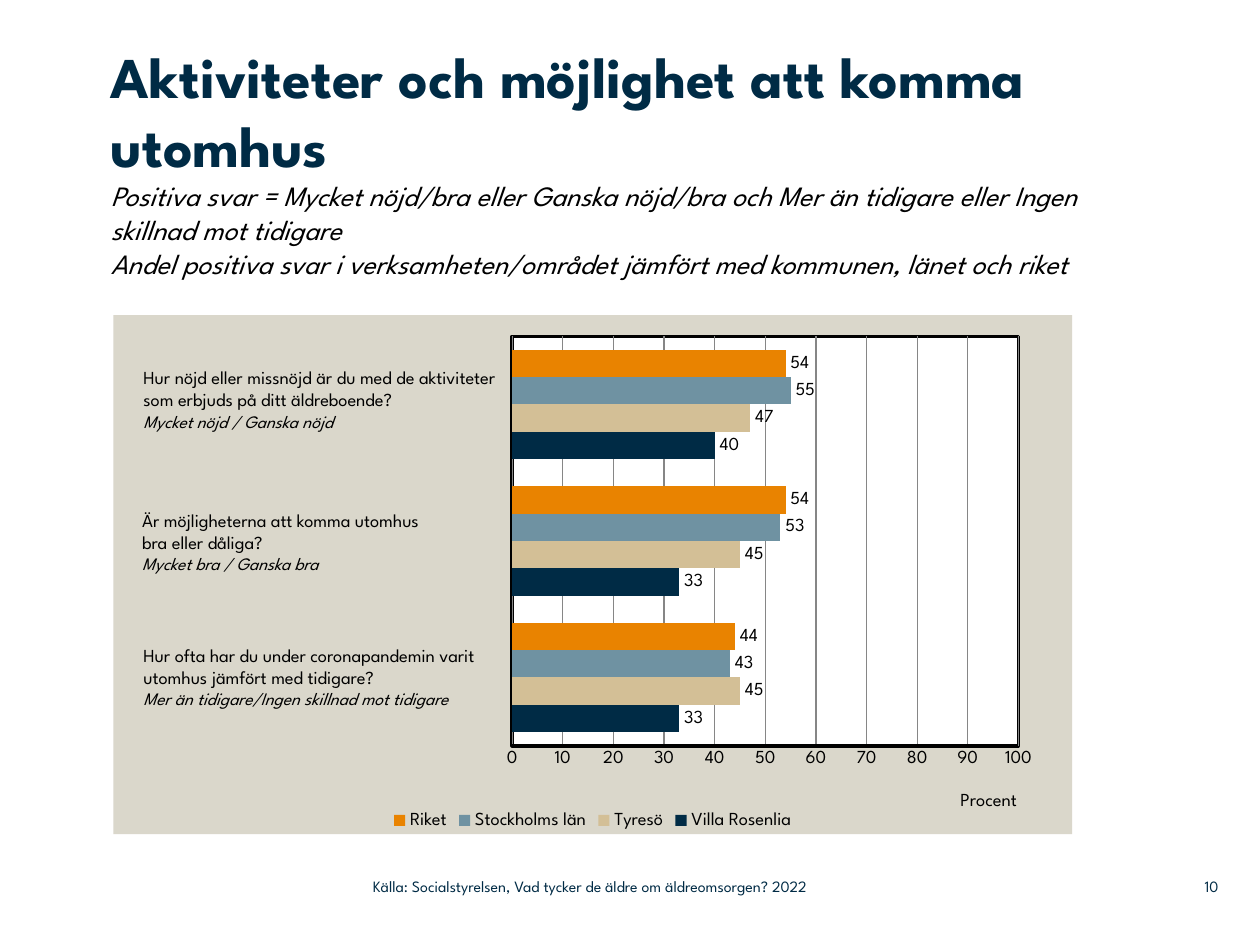
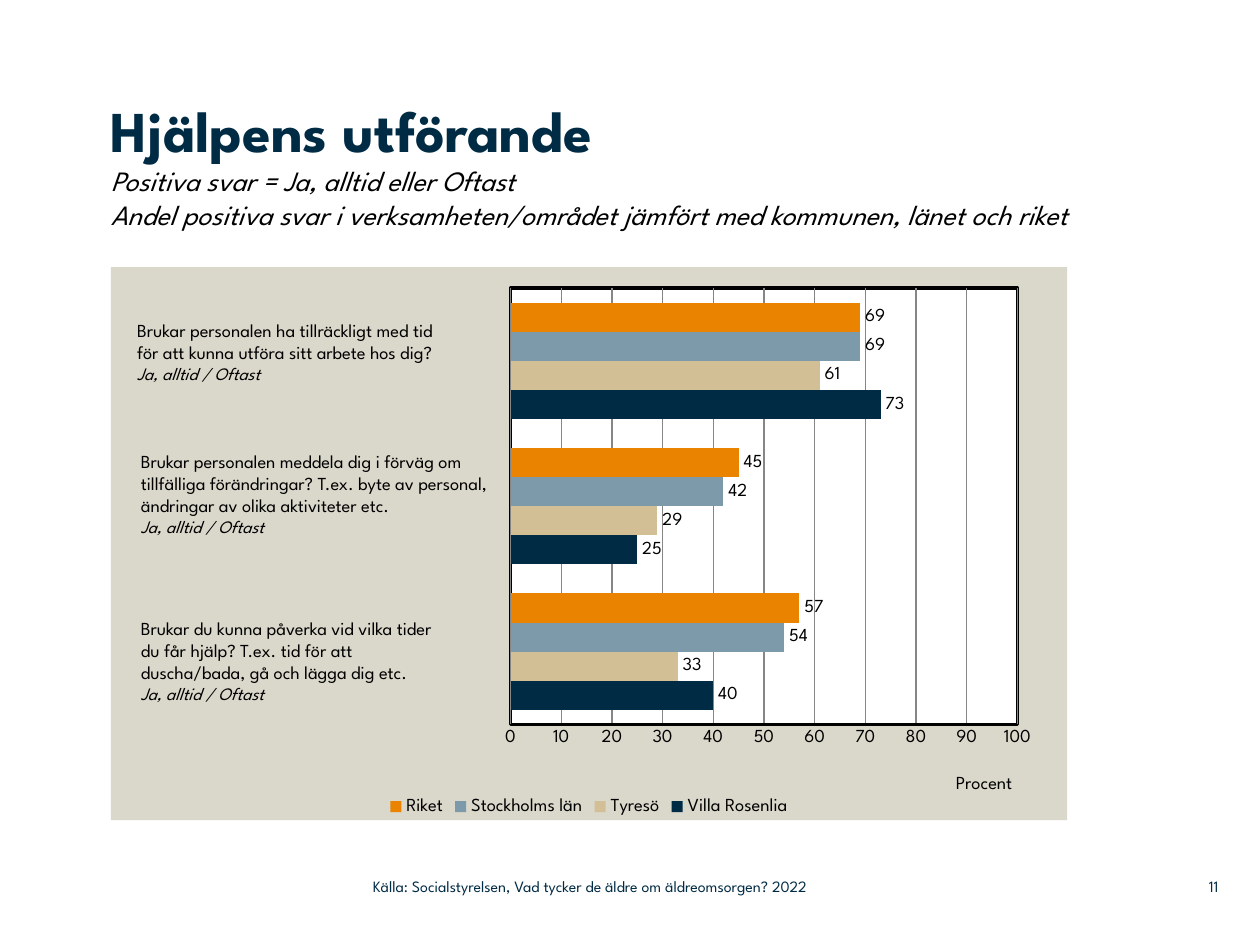
"""Build two slides of survey results on elderly care, each with a bar chart."""
from lxml.etree import SubElement
from pptx import Presentation
from pptx.chart.data import CategoryChartData
from pptx.dml.color import RGBColor
from pptx.enum.chart import XL_CHART_TYPE as ChartType, XL_LABEL_POSITION as LabelPosition
from pptx.enum.chart import XL_LEGEND_POSITION as LegendPosition, XL_TICK_MARK as TickMark
from pptx.enum.text import MSO_ANCHOR as Anchor, MSO_AUTO_SIZE as AutoSize, PP_ALIGN as Align
from pptx.oxml import parse_xml
from pptx.oxml.ns import nsdecls, qn
from pptx.util import Pt

PX = 9144
NAVY = RGBColor(0x00, 0x2B, 0x45)
SAND = RGBColor(0xD3, 0xBF, 0x96)
STEEL = RGBColor(0x6F, 0x92, 0xA2)
MIST = RGBColor(0x7D, 0x9A, 0xAA)
ORANGE = RGBColor(0xE9, 0x83, 0x00)
STONE = RGBColor(0xDA, 0xD7, 0xCB)
WHITE = RGBColor(0xFF, 0xFF, 0xFF)
GREY = RGBColor(0x86, 0x86, 0x86)
BLACK = RGBColor(0x00, 0x00, 0x00)

COMPARISON = "Andel positiva svar i verksamheten/området jämfört med kommunen, länet och riket"
SOURCE = "Källa: Socialstyrelsen, Vad tycker de äldre om äldreomsorgen? 2022"


def fill_properties(color, line=""):
    """Return shape properties with a solid fill and an optional black outline."""
    outline = (f'<a:ln w="{Pt(2)}"><a:solidFill><a:srgbClr val="{BLACK}"/></a:solidFill></a:ln>'
               if line else "<a:ln><a:noFill/></a:ln>")
    return parse_xml(f'<c:spPr {nsdecls("c", "a")}><a:solidFill><a:srgbClr val="{color}"/>'
                     f'</a:solidFill>{outline}</c:spPr>')


def set_layout(parent, index, inner=False, **fractions):
    """Place a chart part by fractions of the chart's size."""
    for layout in parent.findall(qn("c:layout")):
        parent.remove(layout)
    layout = parse_xml(f'<c:layout {nsdecls("c")}/>')
    parent.insert(index, layout)
    manual = SubElement(layout, qn("c:manualLayout"))
    if inner:
        SubElement(manual, qn("c:layoutTarget")).set("val", "inner")
    for name in "xy":
        SubElement(manual, qn(f"c:{name}Mode")).set("val", "edge")
    for name, value in fractions.items():
        SubElement(manual, qn(f"c:{name}")).set("val", str(value))


class SurveyDeck:
    """Hold the shared style and the current slide."""

    font = "League Spartan"

    def __init__(self):
        self.presentation = Presentation()
        self.presentation.slide_width = 1000 * PX
        self.presentation.slide_height = 750 * PX
        self.slide = None

    def add_slide(self, number):
        """Start a slide with its source line and number."""
        self.slide = self.presentation.slides.add_slide(self.presentation.slide_layouts[5])
        self.add_footer(296, 443, SOURCE)
        self.add_footer(920, 47, str(number), Align.RIGHT)

    def style(self, font, size, color=BLACK, bold=False, italic=False):
        """Apply the deck's typeface to a font."""
        font.name, font.size = self.font, Pt(size)
        font.bold, font.italic = bold, italic
        font.color.rgb = color

    def add_lines(self, frame, lines, align=Align.LEFT):
        """Write one run per paragraph from (text, style) pairs."""
        for index, (text, style) in enumerate(lines):
            paragraph = frame.paragraphs[0] if index == 0 else frame.add_paragraph()
            paragraph.alignment = align
            run = paragraph.add_run()
            run.text = text
            self.style(run.font, **style)

    def clear_margins(self, frame):
        """Remove a text frame's insets and wrap its text."""
        frame.margin_left = frame.margin_right = frame.margin_top = frame.margin_bottom = 0
        frame.word_wrap = True

    def add_title(self, top, height, heading, definition):
        """Fill the title placeholder with a heading and two italic lines."""
        title = self.slide.shapes.title
        title.left, title.top, title.width, title.height = 88 * PX, top * PX, 780 * PX, height * PX
        frame = title.text_frame
        self.clear_margins(frame)
        frame.auto_size = AutoSize.NONE
        frame.vertical_anchor = Anchor.TOP
        note = dict(size=16, italic=True)
        self.add_lines(frame, [(heading, dict(size=33, color=NAVY, bold=True)),
                               (definition, note), (COMPARISON, note)])

    def add_footer(self, left, width, text, align=Align.LEFT):
        """Add a small text in the footer row."""
        box = self.slide.shapes.add_textbox(left * PX, 689 * PX, width * PX, 29 * PX)
        self.clear_margins(box.text_frame)
        box.text_frame.vertical_anchor = Anchor.MIDDLE
        self.add_lines(box.text_frame, [(text, dict(size=9, color=NAVY))], align)

    def add_question(self, left, top, height, *lines):
        """Add a question whose last line names the positive answers."""
        box = self.slide.shapes.add_textbox(left * PX, top * PX, 302 * PX, height * PX)
        box.text_frame.word_wrap = True
        box.text_frame.auto_size = AutoSize.SHAPE_TO_FIT_TEXT
        *question, answer = lines
        self.add_lines(box.text_frame, [(text, dict(size=10.5)) for text in question]
                       + [(answer, dict(size=10, italic=True))])

    def add_bar_chart(self, bounds, plot_bounds, series_values):
        """Add the grouped bars from (name, color, values) rows."""
        data = CategoryChartData(number_format="0")
        data.categories = ["1", "2", "3"]
        for name, _, values in series_values:
            data.add_series(name, values)
        chart = self.slide.shapes.add_chart(
            ChartType.BAR_CLUSTERED, *(length * PX for length in bounds), data).chart
        self.style(chart.font, 10.5)
        chart.has_title = False
        chart.has_legend = True
        chart.legend.position = LegendPosition.BOTTOM
        chart.legend.include_in_layout = False
        self.style(chart.legend.font, 10.5)
        self.format_bars(chart.plots[0], [color for _, color, _ in series_values])
        chart.category_axis.visible = False
        self.format_value_axis(chart.value_axis)
        plot_area = chart.element.find(".//" + qn("c:plotArea"))
        set_layout(plot_area, 0, inner=True, **dict(zip("xywh", plot_bounds)))
        plot_area.append(fill_properties(WHITE, line=True))
        chart.element.find(qn("c:txPr")).addprevious(fill_properties(STONE))

    def format_bars(self, plot, colors):
        """Set the bars' gap, colours and value labels."""
        plot.gap_width, plot.overlap = 100, 0
        plot.vary_by_categories = False
        for series, color in zip(plot.series, colors):
            series.format.fill.solid()
            series.format.fill.fore_color.rgb = color
            labels = series.data_labels
            labels.show_value = True
            labels.position = LabelPosition.OUTSIDE_END
            self.style(labels.font, 10.5)

    def format_value_axis(self, axis):
        """Set the percent scale, its grid and its title."""
        axis.minimum_scale, axis.maximum_scale, axis.major_unit = 0, 100, 10
        axis.major_tick_mark = axis.minor_tick_mark = TickMark.NONE
        axis.format.line.color.rgb = BLACK
        axis.format.line.width = Pt(2)
        axis.has_major_gridlines = True
        axis.major_gridlines.format.line.color.rgb = GREY
        axis.major_gridlines.format.line.width = Pt(0.75)
        self.style(axis.tick_labels.font, 10.5)
        self.add_lines(axis.axis_title.text_frame, [("Procent", dict(size=10.5))])
        set_layout(axis.axis_title.element, 1, x=0.88, y=0.91)


def main():
    """Build and save the deck."""
    deck = SurveyDeck()

    deck.add_slide(10)
    deck.add_title(32, 189, "Aktiviteter och möjlighet att komma utomhus",
                   "Positiva svar = Mycket nöjd/bra eller Ganska nöjd/bra och Mer än tidigare "
                   "eller Ingen skillnad mot tidigare")
    deck.add_bar_chart((90, 250, 761, 412), (0.416, 0.041, 0.528, 0.789), [
        ("Villa Rosenlia", NAVY, (33, 33, 40)),
        ("Tyresö", SAND, (45, 45, 47)),
        ("Stockholms län", STEEL, (43, 53, 55)),
        ("Riket", ORANGE, (44, 54, 54))])
    deck.add_question(104, 286, 98, "Hur nöjd eller missnöjd är du med de aktiviteter "
                      "som erbjuds på ditt äldreboende?", "Mycket nöjd / Ganska nöjd")
    deck.add_question(103, 399, 81, "Är möjligheterna att komma utomhus", "bra eller dåliga?",
                      "Mycket bra / Ganska bra")
    deck.add_question(104, 506, 79, "Hur ofta har du under coronapandemin varit utomhus "
                      "jämfört med tidigare?", "Mer än tidigare/Ingen skillnad mot tidigare")

    deck.add_slide(11)
    deck.add_title(75, 121, "Hjälpens utförande", "Positiva svar = Ja, alltid eller Oftast")
    deck.add_bar_chart((88, 212, 759, 439), (0.418, 0.038, 0.53, 0.789), [
        ("Villa Rosenlia", NAVY, (40, 25, 73)),
        ("Tyresö", SAND, (33, 29, 61)),
        ("Stockholms län", MIST, (54, 42, 69)),
        ("Riket", ORANGE, (57, 45, 69))])
    answer = "Ja, alltid / Oftast"
    deck.add_question(99, 248, 81, "Brukar personalen ha tillräckligt med tid",
                      "för att kunna utföra sitt arbete hos dig?", answer)
    deck.add_question(102, 352, 98, "Brukar personalen meddela dig i förväg om tillfälliga "
                      "förändringar? T.ex. byte av personal, ändringar av olika aktiviteter etc.",
                      answer)
    deck.add_question(102, 485, 81, "Brukar du kunna påverka vid vilka tider",
                      "du får hjälp? T.ex. tid för att", "duscha/bada, gå och lägga dig etc.",
                      answer)

    deck.presentation.save("out.pptx")


if __name__ == "__main__":
    main()
